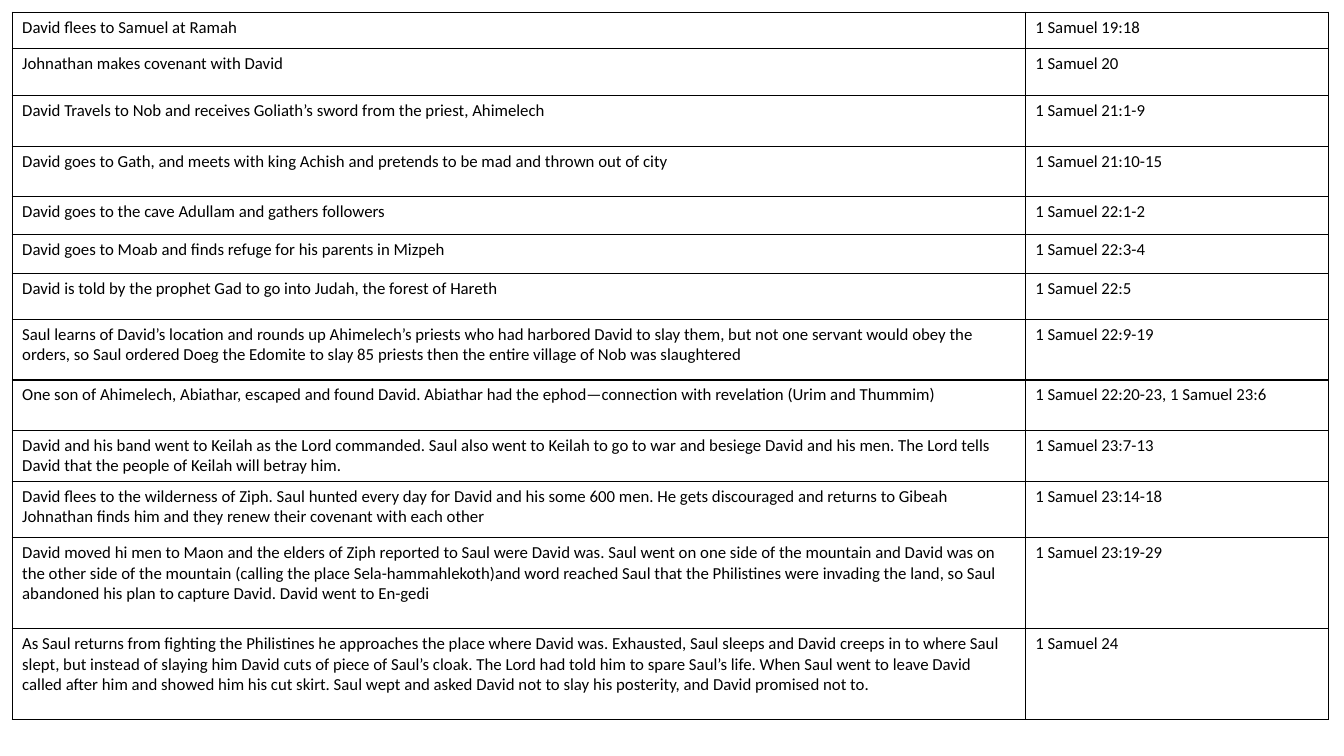
from dataclasses import dataclass

from lxml.etree import SubElement
from pptx import Presentation
from pptx.dml.color import RGBColor
from pptx.oxml.ns import qn
from pptx.util import Inches, Pt


@dataclass(frozen=True)
class Theme:
    font: str = "Calibri"
    text_size: float = 12
    text_color: str = "000000"
    border_color: str = "000000"
    border_width: float = 1


THEME = Theme()
COLUMN_WIDTHS = (10.04, 3.01)

# Row height in inches, event, scripture reference
EVENTS = [
    (0.36, "David flees to Samuel at Ramah", "1 Samuel 19:18"),
    (0.47, "Johnathan makes covenant with David", "1 Samuel 20"),
    (0.5, "David Travels to Nob and receives Goliath’s sword from the priest, Ahimelech",
     "1 Samuel 21:1-9"),
    (0.5, "David goes to Gath, and meets with king Achish and pretends to be mad "
     "and thrown out of city", "1 Samuel 21:10-15"),
    (0.38, "David goes to the cave Adullam and gathers followers", "1 Samuel 22:1-2"),
    (0.38, "David goes to Moab and finds refuge for his parents in Mizpeh",
     "1 Samuel 22:3-4"),
    (0.46, "David is told by the prophet Gad to go into Judah, the forest of Hareth",
     "1 Samuel 22:5"),
    (0.6, "Saul learns of David’s location and rounds up Ahimelech’s priests who had "
     "harbored David to slay them, but not one servant would obey the orders, so Saul "
     "ordered Doeg the Edomite to slay 85 priests then the entire village of Nob was "
     "slaughtered", "1 Samuel 22:9-19"),
    (0.5, "One son of Ahimelech, Abiathar, escaped and found David. Abiathar had the "
     "ephod—connection with revelation (Urim and Thummim)",
     "1 Samuel 22:20-23, 1 Samuel 23:6"),
    (0.43, "David and his band went to Keilah as the Lord commanded. Saul also went to "
     "Keilah to go to war and besiege David and his men. The Lord tells David that the "
     "people of Keilah will betray him.", "1 Samuel 23:7-13"),
    (0.56, "David flees to the wilderness of Ziph. Saul hunted every day for David and "
     "his some 600 men. He gets discouraged and returns to Gibeah\n"
     "Johnathan finds him and they renew their covenant with each other",
     "1 Samuel 23:14-18"),
    (0.9, "David moved hi men to Maon and the elders of Ziph reported to Saul were David "
     "was. Saul went on one side of the mountain and David was on the other side of the "
     "mountain (calling the place Sela-hammahlekoth)and word reached Saul that the "
     "Philistines were invading the land, so Saul abandoned his plan to capture David. "
     "David went to En-gedi", "1 Samuel 23:19-29"),
    (0.9, "As Saul returns from fighting the Philistines he approaches the place where "
     "David was. Exhausted, Saul sleeps and David creeps in to where Saul slept, but "
     "instead of slaying him David cuts of piece of Saul’s cloak. The Lord had told him "
     "to spare Saul’s life. When Saul went to leave David called after him and showed "
     "him his cut skirt. Saul wept and asked David not to slay his posterity, and David "
     "promised not to.", "1 Samuel 24"),
]


def write_text(text_frame, text, *, font=THEME.font, size=THEME.text_size,
               color=THEME.text_color):
    """Write one paragraph for each line of text."""
    text_frame.text = text
    for paragraph in text_frame.paragraphs:
        for run in paragraph.runs:
            run.font.name = font
            run.font.size = Pt(size)
            run.font.color.rgb = RGBColor.from_string(color)


def set_borders(cell, color, width):
    properties = cell._tc.get_or_add_tcPr()
    for position, side in enumerate(("lnL", "lnR", "lnT", "lnB")):
        line = SubElement(properties, qn(f"a:{side}"), w=str(Pt(width)))
        fill = SubElement(line, qn("a:solidFill"))
        SubElement(fill, qn("a:srgbClr"), val=color)
        properties.insert(position, line)


def add_event_table(slide, left, top, width, height):
    """Fill the box with the table, sharing its width by COLUMN_WIDTHS."""
    frame = slide.shapes.add_table(len(EVENTS), len(COLUMN_WIDTHS), Inches(left),
                                   Inches(top), Inches(width), Inches(height))
    table = frame.table
    table.first_row = False
    table.horz_banding = False
    for column, share in zip(table.columns, COLUMN_WIDTHS):
        column.width = Inches(width * share / sum(COLUMN_WIDTHS))
    for row, (row_height, *texts) in zip(table.rows, EVENTS):
        row.height = Inches(row_height)
        for cell, text in zip(row.cells, texts):
            write_text(cell.text_frame, text)
            cell.fill.background()
            set_borders(cell, THEME.border_color, THEME.border_width)


def main():
    presentation = Presentation()
    presentation.slide_width = Inches(13.33)
    presentation.slide_height = Inches(7.5)
    slide = presentation.slides.add_slide(presentation.slide_layouts[6])
    add_event_table(slide, 0.12, 0.12, 13.06, 7.02)
    presentation.save("out.pptx")


if __name__ == "__main__":
    main()
